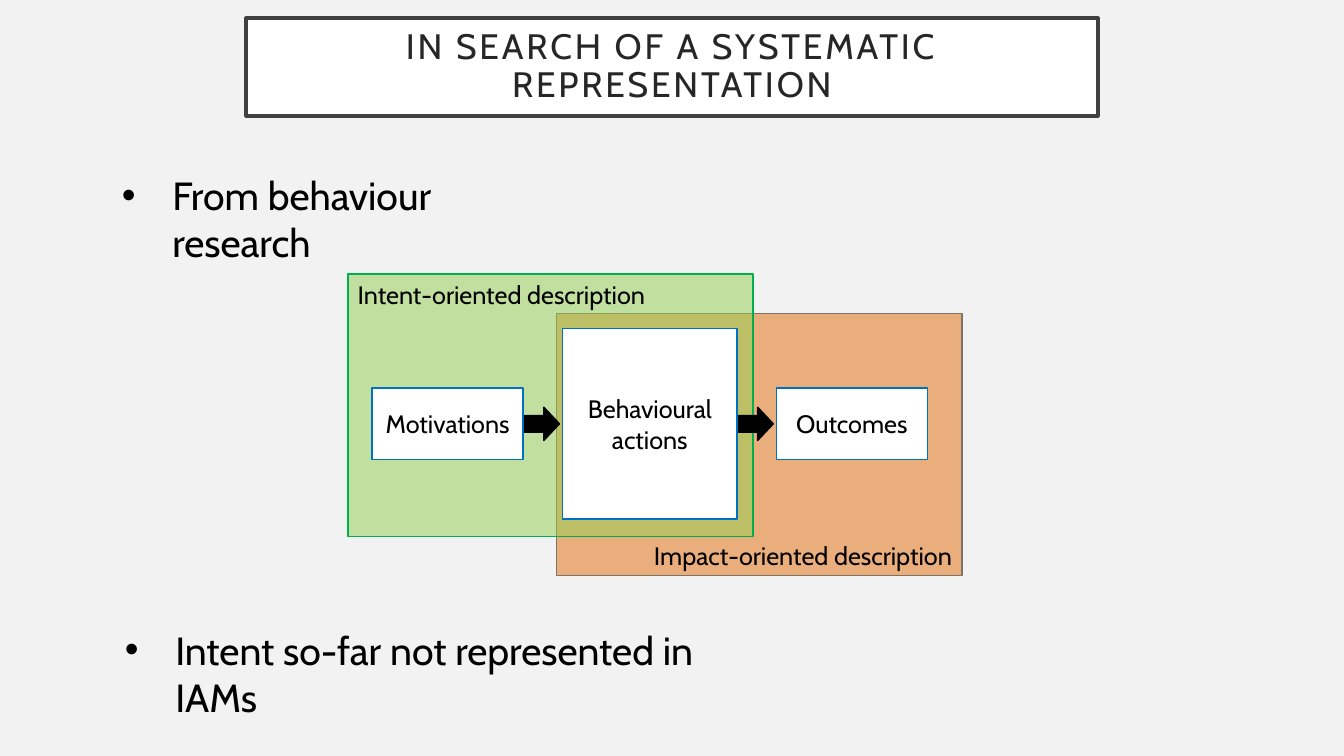
from dataclasses import dataclass

from lxml import etree
from pptx import Presentation
from pptx.dml.color import RGBColor
from pptx.enum.shapes import MSO_SHAPE
from pptx.enum.text import MSO_ANCHOR, MSO_AUTO_SIZE, PP_ALIGN
from pptx.oxml.ns import qn
from pptx.util import Inches, Pt

RECT, ARROW = MSO_SHAPE.RECTANGLE, MSO_SHAPE.RIGHT_ARROW
TOP, MIDDLE, BOTTOM = MSO_ANCHOR.TOP, MSO_ANCHOR.MIDDLE, MSO_ANCHOR.BOTTOM
LEFT, CENTER, RIGHT = PP_ALIGN.LEFT, PP_ALIGN.CENTER, PP_ALIGN.RIGHT
GROW = MSO_AUTO_SIZE.SHAPE_TO_FIT_TEXT


@dataclass(frozen=True)
class Theme:
    font: str = "Cabin"
    title_size: float = 25.2
    bullet_size: float = 28
    label_size: float = 18
    background: str = "F2F2F2"
    white: str = "FFFFFF"
    black: str = "000000"
    title_text: str = "262626"
    title_line: str = "404040"
    box_line: str = "0070C0"
    intent_fill: str = "92D050"
    intent_line: str = "00B050"
    impact_fill: str = "E46C0A"
    impact_line: str = "7B7366"


theme = Theme()
prs = Presentation()
prs.slide_width, prs.slide_height = Inches(13.33), Inches(7.5)
COL, ROW = prs.slide_width / 100, prs.slide_height / 100  # 100 x 100 grid
s = prs.slides.add_slide(prs.slide_layouts[6])
s.background.fill.solid()
s.background.fill.fore_color.rgb = RGBColor.from_string(theme.background)


def add_box(kind, x, y, w, h, fill, line, line_width=1, opacity=100):
    """Add a filled, outlined shape placed in grid columns and rows."""
    sp = s.shapes.add_shape(kind, int(x * COL), int(y * ROW), int(w * COL), int(h * ROW))
    sp.shadow.inherit = False
    sp.fill.solid()
    sp.fill.fore_color.rgb = RGBColor.from_string(fill)
    sp.line.color.rgb = RGBColor.from_string(line)
    sp.line.width = Pt(line_width)
    if opacity < 100:
        color = sp.fill._xPr.find(qn("a:solidFill"))[0]
        etree.SubElement(color, qn("a:alpha"), val=str(opacity * 1000))
    return sp


def set_text(sp, text, size, color=theme.black, align=LEFT, anchor=TOP):
    tf = sp.text_frame
    tf.word_wrap = True
    tf.vertical_anchor = anchor
    tf.text = text
    p = tf.paragraphs[0]
    p.alignment = align
    font = p.runs[0].font
    font.name, font.size = theme.font, Pt(size)
    font.color.rgb = RGBColor.from_string(color)
    return p


# Title
TITLE_W = 63.39
sp = add_box(RECT, (100 - TITLE_W) / 2, 2.4, TITLE_W, 12.93,
             theme.white, theme.title_line, 2.5)
p = set_text(sp, "IN SEARCH OF A SYSTEMATIC REPRESENTATION", theme.title_size,
             theme.title_text, CENTER, MIDDLE)
p.line_spacing = 0.9
p.runs[0].font._element.set("spc", "200")
tf = sp.text_frame
tf.margin_left = tf.margin_right = tf.margin_top = tf.margin_bottom = Inches(0.2)

# Overlapping description panels
PANEL_W, PANEL_H = 30.16, 34.67
for text, x, y, fill, line, opacity, align, anchor in (
    ("Impact-oriented description", 41.41, 41.47,
     theme.impact_fill, theme.impact_line, 50, RIGHT, BOTTOM),
    ("Intent-oriented description", 25.88, 36.27,
     theme.intent_fill, theme.intent_line, 51, LEFT, TOP),
):
    sp = add_box(RECT, x, y, PANEL_W, PANEL_H, fill, line, opacity=opacity)
    set_text(sp, text, theme.label_size, align=align, anchor=anchor)

# Chain of boxes on one centre line, an arrow leaving each but the last
CHAIN_MID = 56.07
ARROW_W, ARROW_H = 2.7, 4.4
chain = (
    ("Motivations", 27.68, 11.25, 9.47),
    ("Behavioural actions", 41.86, 12.98, 25.2),
    ("Outcomes", 57.76, 11.25, 9.47),
)
for text, x, w, h in chain[:-1]:
    sp = add_box(ARROW, x + w, CHAIN_MID - ARROW_H / 2, ARROW_W, ARROW_H,
                 theme.black, theme.black)
    sp.adjustments[0], sp.adjustments[1] = 0.5, 0.47
for text, x, w, h in chain:
    sp = add_box(RECT, x, CHAIN_MID - h / 2, w, h, theme.white, theme.box_line)
    set_text(sp, text, theme.label_size, align=CENTER, anchor=MIDDLE)

# Bullets above and below the diagram
BULLET_H, INDENT = 7.6, Inches(0.5)
for text, x, y, w in (
    ("From behaviour research", 8.33, 22, 35.18),
    ("Intent so-far not represented in IAMs", 8.55, 82.13, 50.04),
):
    sp = s.shapes.add_textbox(int(x * COL), int(y * ROW), int(w * COL), int(BULLET_H * ROW))
    p = set_text(sp, text, theme.bullet_size)
    sp.text_frame.auto_size = GROW
    sp.text_frame.margin_right = Inches(0.4)
    pPr = p._p.get_or_add_pPr()
    pPr.set("marL", str(INDENT))
    pPr.set("indent", str(-INDENT))
    etree.SubElement(pPr, qn("a:buFont"), typeface="Arial")
    etree.SubElement(pPr, qn("a:buChar"), char="•")

prs.save("out.pptx")
